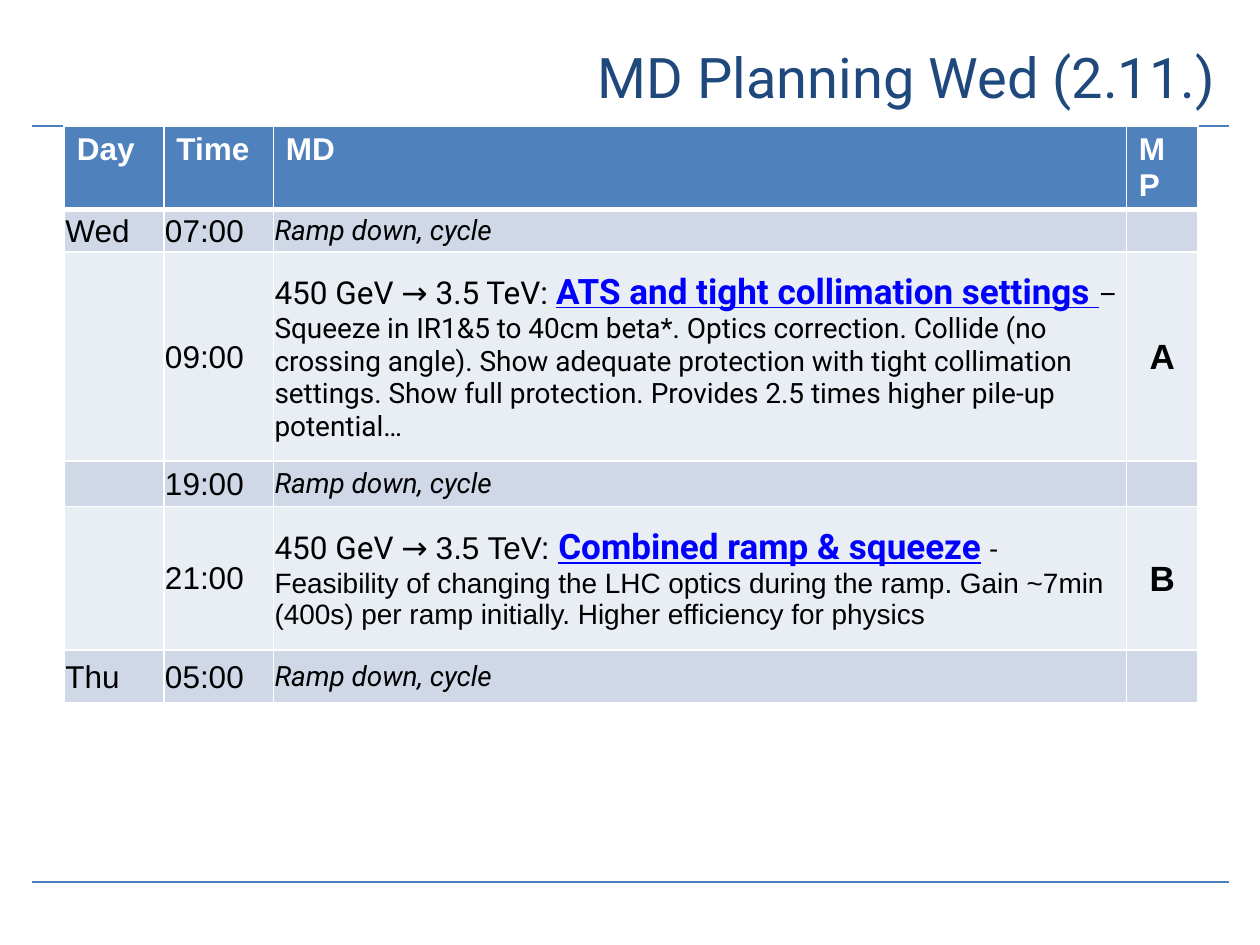
from lxml import etree
from pptx import Presentation
from pptx.dml.color import RGBColor
from pptx.enum import shapes, text
from pptx.oxml.ns import qn
from pptx.util import Pt

SANS, ROBOTO = "Arial", "Roboto"
HEADER_FILL, BANDS = "4F81BD", ("D0D8E8", "E9EDF4")
COLUMN_WIDTHS = (56.9, 62.6, 487.4, 41.1)
ROW_HEIGHTS = (29.5, 24.5, 119.5, 25.9, 82.1, 30.2)

# A run is (text, size, font, style); style letters: b bold, i italic, u underlined
RAMP_DOWN = [("Ramp down, cycle", 16, ROBOTO, "i")]
COLLIMATION = [
    ("450 GeV → 3.5 TeV: ", 18, ROBOTO, ""),
    ("ATS and tight collimation settings ", 20, ROBOTO, "bu"),
    ("– Squeeze in IR1&5 to 40cm beta*. Optics correction. Collide (no crossing "
     "angle). Show adequate protection with tight collimation settings. Show full "
     "protection. Provides 2.5 times higher pile-up potential…", 16, ROBOTO, ""),
]
RAMP_SQUEEZE = [
    ("450 GeV → ", 18, ROBOTO, ""),
    ("3.5 TeV: ", 18, SANS, ""),
    ("Combined ramp & squeeze", 20, ROBOTO, "bu"),
    (" ", 20, ROBOTO, ""),
    ("- ", 16, ROBOTO, ""),
    ("Feasibility of changing the LHC optics during the ramp. Gain ~7min (400s) "
     "per ramp initially. Higher efficiency for physics", 16, SANS, ""),
]
HEADINGS = ("Day", "Time", "MD", "MP")
SCHEDULE = (
    ("Wed", "07:00", RAMP_DOWN, ""),
    ("", "09:00", COLLIMATION, "A"),
    ("", "19:00", RAMP_DOWN, ""),
    ("", "21:00", RAMP_SQUEEZE, "B"),
    ("Thu", "05:00", RAMP_DOWN, ""),
)


def rgb(color):
    return RGBColor.from_string(color)


def add_run(paragraph, words, size, font, style, color):
    run = paragraph.add_run()
    run.text = words
    run.font.size = Pt(size)
    run.font.name = font
    run.font.bold = "b" in style
    run.font.italic = "i" in style
    run.font.underline = "u" in style
    run.font.color.rgb = rgb(color)


def add_rule(slide, y):
    rule = slide.shapes.add_connector(
        shapes.MSO_CONNECTOR.STRAIGHT, Pt(18), Pt(y), Pt(702), Pt(y))
    rule.line.color.rgb = rgb("4B7EBC")
    rule.line.width = Pt(1.5)
    etree.SubElement(rule._element.spPr, qn("a:effectLst"))


def set_title(slide, words):
    title = slide.shapes.title
    title.left, title.top, title.width, title.height = Pt(126), Pt(12.2), Pt(576), Pt(62.6)
    title.text_frame.vertical_anchor = text.MSO_ANCHOR.MIDDLE
    heading = title.text_frame.paragraphs[0]
    heading.alignment = text.PP_ALIGN.RIGHT
    add_run(heading, words, 32, ROBOTO, "", "1F497D")


def style_cell(cell, fill, bottom=1):
    """Fill the cell and give it white borders, the lower one of the given width."""
    properties = cell._tc.get_or_add_tcPr()
    for side, width in (("L", 1), ("R", 1), ("T", 1), ("B", bottom)):
        border = etree.SubElement(properties, qn(f"a:ln{side}"), w=str(Pt(width)))
        solid = etree.SubElement(border, qn("a:solidFill"))
        etree.SubElement(solid, qn("a:srgbClr"), val="FFFFFF")
    cell.fill.solid()
    cell.fill.fore_color.rgb = rgb(fill)


def fill_header(cell, heading):
    style_cell(cell, HEADER_FILL, bottom=3)
    add_run(cell.text_frame.paragraphs[0], heading, 18, SANS, "b", "FFFFFF")


def fill_entry(cell, runs, band):
    style_cell(cell, band)
    cell.margin_left = cell.margin_top = cell.margin_right = Pt(0.7)
    cell.margin_bottom = Pt(0)
    cell.vertical_anchor = text.MSO_ANCHOR.MIDDLE
    for words, size, font, style in runs:
        color = "0000FF" if "u" in style else "000000"
        add_run(cell.text_frame.paragraphs[0], words, size, font, style, color)


def add_schedule(slide):
    table = slide.shapes.add_table(
        len(ROW_HEIGHTS), len(COLUMN_WIDTHS), Pt(36.7), Pt(72),
        Pt(sum(COLUMN_WIDTHS)), Pt(sum(ROW_HEIGHTS))).table
    table.first_row = table.horz_banding = False
    for column, width in zip(table.columns, COLUMN_WIDTHS):
        column.width = Pt(width)
    for row, height in zip(table.rows, ROW_HEIGHTS):
        row.height = Pt(height)
    for col, heading in enumerate(HEADINGS):
        fill_header(table.cell(0, col), heading)
    for row, (day, time, study, protection) in enumerate(SCHEDULE, 1):
        entries = (
            [(day, 18, SANS, "")] if day else [],
            [(time, 18, SANS, "")],
            study,
            [(protection, 20, SANS, "b")] if protection else [],
        )
        for col, runs in enumerate(entries):
            fill_entry(table.cell(row, col), runs, BANDS[(row - 1) % 2])
        table.cell(row, 3).text_frame.paragraphs[0].alignment = text.PP_ALIGN.CENTER


def main():
    deck = Presentation()
    deck.slide_width, deck.slide_height = Pt(720), Pt(540)
    slide = deck.slides.add_slide(deck.slide_layouts[5])
    for y in (72, 504):
        add_rule(slide, y)
    set_title(slide, "MD Planning Wed (2.11.)")
    add_schedule(slide)
    deck.save("out.pptx")


if __name__ == "__main__":
    main()
